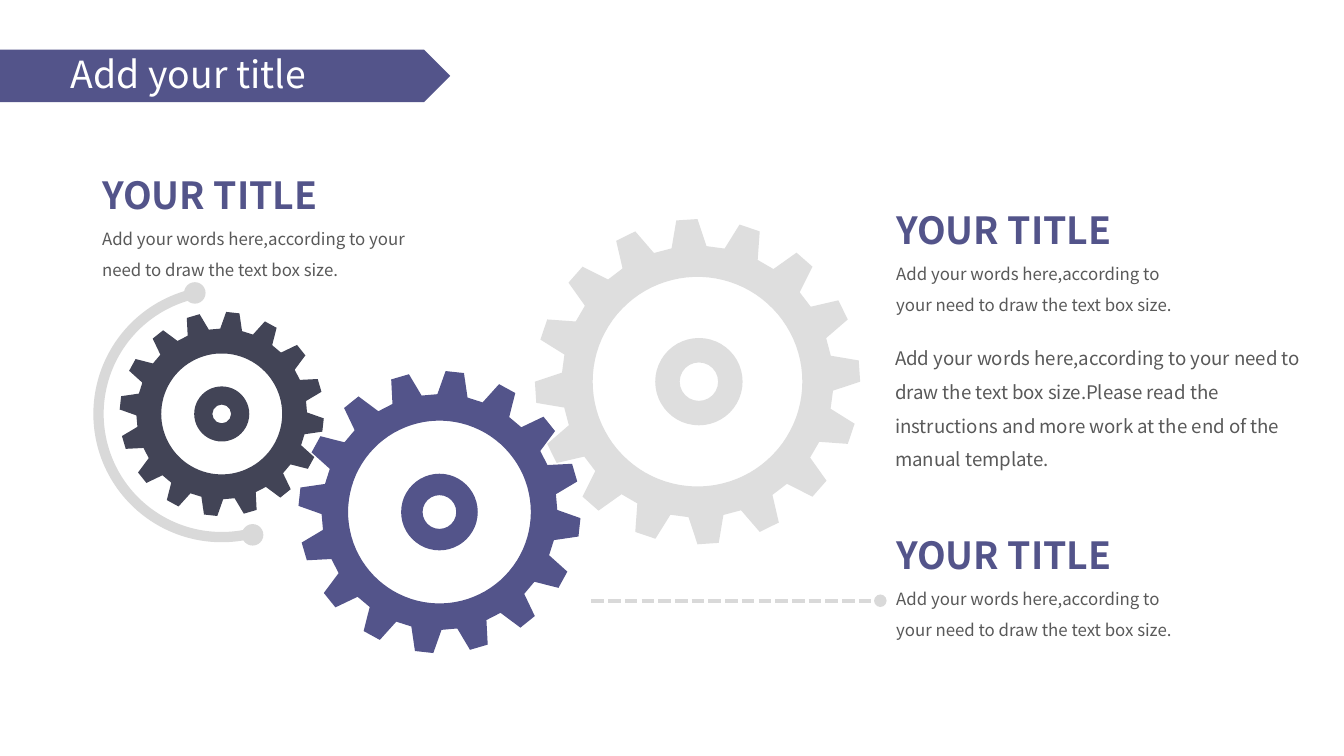
from math import cos, radians, sin

from lxml import etree
from pptx import Presentation
from pptx.dml.color import RGBColor
from pptx.enum.dml import MSO_LINE
from pptx.enum.shapes import MSO_CONNECTOR, MSO_SHAPE
from pptx.enum.text import MSO_AUTO_SIZE
from pptx.oxml.ns import qn
from pptx.util import Inches, Pt

PENTAGON, OVAL = MSO_SHAPE.PENTAGON, MSO_SHAPE.OVAL
DONUT, BLOCK_ARC = MSO_SHAPE.DONUT, MSO_SHAPE.BLOCK_ARC
STRAIGHT, SQUARE_DOT = MSO_CONNECTOR.STRAIGHT, MSO_LINE.SQUARE_DOT
GROW = MSO_AUTO_SIZE.SHAPE_TO_FIT_TEXT

SLIDE_WIDTH = Inches(10)
SLIDE_HEIGHT = SLIDE_WIDTH * 9 // 16

FONT = "Noto Sans CJK JP"
PURPLE, DARK, SILVER, TRACK = "53548A", "424456", "DEDEDE", "D9D9D9"
WHITE, BODY = "FFFFFF", "595959"

TEETH = 16
ROOT_RATIO = 0.835
# Corners of one tooth and the gap after it: angle offset, radius ratio
TOOTH = ((0, 1), (-7.5, 1), (-11, ROOT_RATIO), (-18.7, ROOT_RATIO))

SHORT_TEXT = "Add your words here,according to your need to draw the text box size."
LONG_TEXT = (SHORT_TEXT + "Please read the instructions and more work "
             "at the end of the manual template.")


def rgb(hex_color):
    return RGBColor.from_string(hex_color)


def paint(shape, color):
    shape.shadow.inherit = False
    shape.fill.solid()
    shape.fill.fore_color.rgb = rgb(color)
    shape.line.fill.background()


def add_preset(slide, kind, left, top, width, height, color, adjustments=()):
    shape = slide.shapes.add_shape(
        kind, Inches(left), Inches(top), Inches(width), Inches(height))
    for i, value in enumerate(adjustments):
        shape.adjustments[i] = value
    paint(shape, color)


def add_round(slide, kind, center, diameter, color, adjustments=()):
    x, y = center
    add_preset(slide, kind, x - diameter / 2, y - diameter / 2,
               diameter, diameter, color, adjustments)


def polar(center, radius, degrees):
    x, y = center
    return (Inches(x + radius * cos(radians(degrees))),
            Inches(y + radius * sin(radians(degrees))))


def add_gear_ring(slide, center, radius, hole, start, color):
    """Draw a toothed ring with a round hole."""
    rim = [polar(center, radius * ratio, start - tooth * 360 / TEETH + offset)
           for tooth in range(TEETH) for offset, ratio in TOOTH]
    opening = [polar(center, hole, angle) for angle in range(0, 360, 4)]
    builder = slide.shapes.build_freeform(*rim[0], scale=1.0)
    builder.add_line_segments(rim[1:], close=True)
    builder.move_to(*opening[0])
    builder.add_line_segments(opening[1:], close=True)
    paint(builder.convert_to_shape(), color)


def add_text(slide, text, left, top, width, height, size, color,
             bold=False, spacing=None, insets=(0.1, 0.05), wrap=True, grow=True):
    box = slide.shapes.add_textbox(
        Inches(left), Inches(top), Inches(width), Inches(height))
    frame = box.text_frame
    frame.text = text
    frame.word_wrap = wrap
    if grow:
        frame.auto_size = GROW
    frame.margin_left = frame.margin_right = Inches(insets[0])
    frame.margin_top = frame.margin_bottom = Inches(insets[1])
    paragraph = frame.paragraphs[0]
    if spacing:
        paragraph.line_spacing = spacing
    font = paragraph.runs[0].font
    font.name, font.size, font.bold = FONT, Pt(size), bold
    font.color.rgb = rgb(color)


def add_topic(slide, left, top, heading_width, heading_height, body_height, insets):
    add_text(slide, "YOUR TITLE", left, top, heading_width, heading_height,
             20, PURPLE, bold=True, insets=insets, wrap=False)
    add_text(slide, SHORT_TEXT, left, top + 0.35, 2.44, body_height,
             9, BODY, spacing=1.5, insets=insets)


def add_pointer(slide, left, right, y):
    pointer = slide.shapes.add_connector(
        STRAIGHT, Inches(left), Inches(y), Inches(right), Inches(y))
    pointer.line.color.rgb = rgb(TRACK)
    pointer.line.width = Pt(2.25)
    pointer.line.dash_style = SQUARE_DOT
    properties = pointer.line._get_or_add_ln()
    properties.find(qn("a:prstDash")).set("val", "sysDash")
    etree.SubElement(properties, qn("a:tailEnd"), type="oval")
    etree.SubElement(properties.getparent(), qn("a:effectLst"))


def main():
    deck = Presentation()
    deck.slide_width, deck.slide_height = SLIDE_WIDTH, SLIDE_HEIGHT
    slide = deck.slides.add_slide(deck.slide_layouts[6])

    # Title banner
    add_preset(slide, PENTAGON, 0, 0.37, 3.35, 0.39, PURPLE)
    add_text(slide, "Add your title", 0.43, 0.33, 2.7, 0.47, 20, WHITE, grow=False)

    # Gears, from back to front, then their hubs
    large, middle, small = (5.19, 2.84), (3.27, 3.81), (1.65, 3.08)
    add_gear_ring(slide, large, 1.21, 0.78, 0, SILVER)
    add_gear_ring(slide, middle, 1.05, 0.68, 10, PURPLE)
    add_gear_ring(slide, small, 0.76, 0.45, 10, DARK)
    add_round(slide, DONUT, middle, 0.57, PURPLE, [0.28])
    add_round(slide, DONUT, (5.2, 2.84), 0.65, SILVER, [0.28])
    add_round(slide, DONUT, small, 0.41, DARK, [0.33])

    # Arc around the small gear; its angles are in units of 0.6 per degree
    add_round(slide, BLOCK_ARC, small, 1.91, TRACK,
              [75.5 * 0.6, 257.5 * 0.6, 0.04])
    for arc_end in ((1.45, 2.18), (1.88, 3.98)):
        add_round(slide, OVAL, arc_end, 0.16, TRACK)

    # Topics
    narrow = (0.08, 0.04)
    add_topic(slide, 0.68, 1.24, 1.81, 0.42, 0.54, narrow)
    for top in (1.49, 3.91):
        add_topic(slide, 6.57, top, 1.84, 0.44, 0.55, (0.1, 0.05))
    add_text(slide, LONG_TEXT, 6.58, 2.46, 3.2, 1.09, 10, BODY,
             spacing=1.5, insets=narrow)

    # Pointer to the lower topic
    add_pointer(slide, 4.4, 6.55, 4.47)

    deck.save("out.pptx")


if __name__ == "__main__":
    main()
